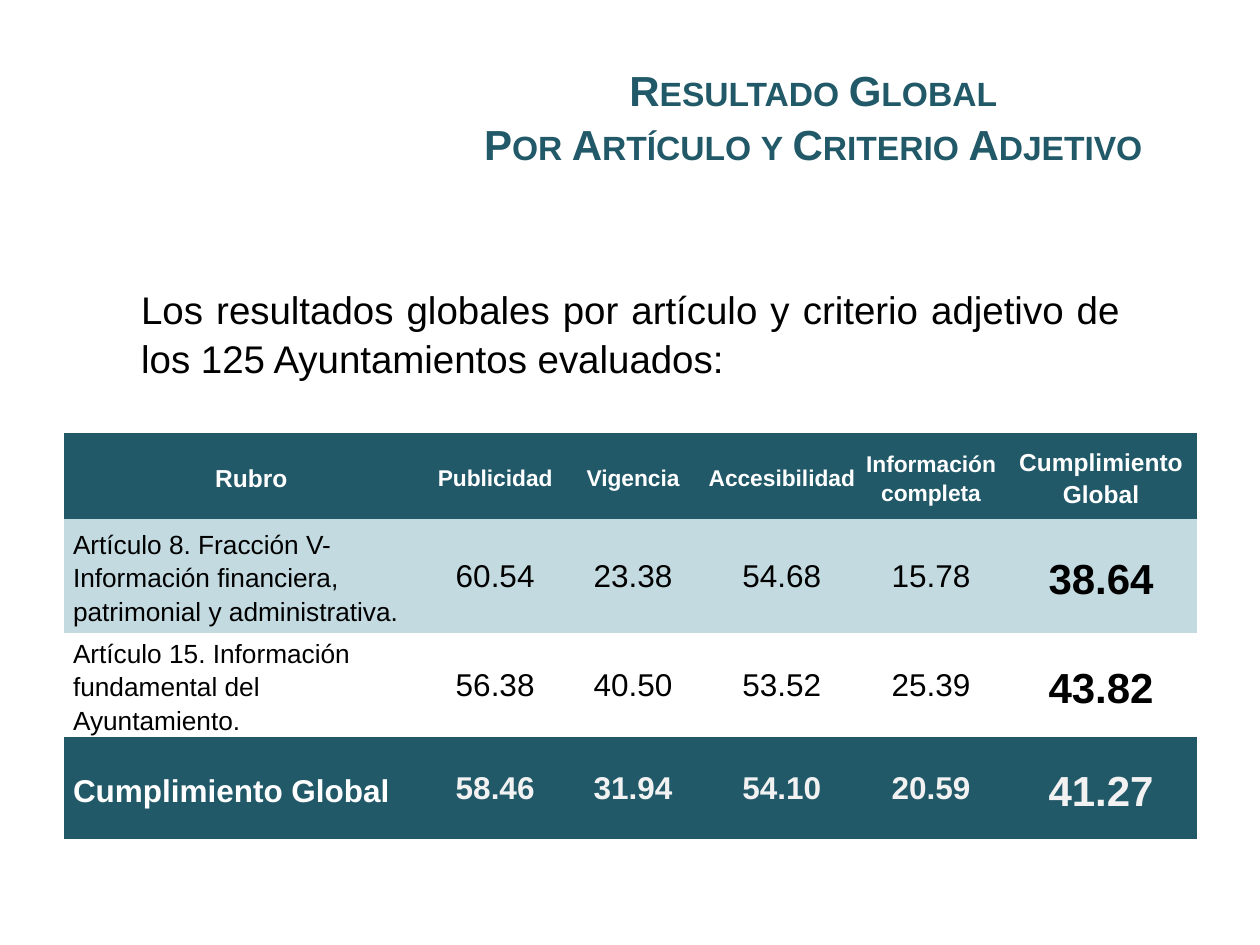
from dataclasses import dataclass

from pptx import Presentation
from pptx.dml.color import RGBColor
from pptx.enum.text import MSO_ANCHOR, MSO_AUTO_SIZE, PP_ALIGN
from pptx.oxml.ns import qn
from pptx.util import Inches, Pt


@dataclass(frozen=True)
class Theme:
    font: str = "Arial"
    teal: str = "215968"
    pale: str = "C2DAE0"
    white: str = "FFFFFF"
    light: str = "F2F2F2"
    black: str = "000000"
    title: int = 24
    body: int = 22
    figure: int = 18
    total: int = 24
    label: int = 15
    header: int = 14
    criterion: int = 13
    leading: float = 1.06
    cell_leading: float = 1.15


NO_GRID_STYLE = "{2D5ABB26-0587-4C30-8999-92F81FD0307C}"


class SlideBuilder:
    def __init__(self, deck, theme):
        self.theme = theme
        self.page = deck.slides.add_slide(deck.slide_layouts[1])

    def style(self, para, size, color, bold=False, align=PP_ALIGN.LEFT, leading=None):
        para.alignment = align
        para.line_spacing = leading
        para.font.name = self.theme.font
        para.font.size = Pt(size)
        para.font.bold = bold
        para.font.color.rgb = RGBColor.from_string(color)

    def place(self, box, left, top, width, height):
        box.left, box.top = Inches(left), Inches(top)
        box.width, box.height = Inches(width), Inches(height)
        frame = box.text_frame
        frame.word_wrap = True
        frame.auto_size = MSO_AUTO_SIZE.NONE
        frame.vertical_anchor = MSO_ANCHOR.TOP
        return frame

    def title(self, text, *area):
        frame = self.place(self.page.shapes.title, *area)
        frame.text = text
        para = frame.paragraphs[0]
        self.style(para, self.theme.title, self.theme.teal, True,
                   PP_ALIGN.CENTER, self.theme.leading)
        para._p.pPr.find(qn("a:defRPr")).set("cap", "small")

    def body(self, text, *area):
        box = self.page.placeholders[1]
        frame = self.place(box, *area)
        box.fill.solid()
        box.fill.fore_color.rgb = RGBColor.from_string(self.theme.white)
        frame.text = text
        para = frame.paragraphs[0]
        # Indented block without a bullet
        properties = para._p.get_or_add_pPr()
        properties.set("marL", str(Inches(0.38)))
        properties.set("indent", "0")
        properties.append(properties.makeelement(qn("a:buNone"), {}))
        para.space_before = Pt(0)
        self.style(para, self.theme.body, self.theme.black,
                   align=PP_ALIGN.JUSTIFY, leading=self.theme.leading)

    def table(self, rows, fills, widths, heights, left, top):
        table = self.page.shapes.add_table(
            len(heights), len(widths), Inches(left), Inches(top),
            Inches(sum(widths)), Inches(sum(heights))).table
        table.first_row = table.horz_banding = False
        table._tbl.tblPr.find(qn("a:tableStyleId")).text = NO_GRID_STYLE
        for column, width in zip(table.columns, widths):
            column.width = Inches(width)
        for row, height in zip(table.rows, heights):
            row.height = Inches(height)
        for r, (texts, fill) in enumerate(zip(rows, fills)):
            for c, text in enumerate(texts):
                cell = table.cell(r, c)
                cell.fill.solid()
                cell.fill.fore_color.rgb = RGBColor.from_string(fill)
                cell.margin_left = cell.margin_right = cell.margin_top = Inches(0.01)
                cell.margin_bottom = 0
                cell.vertical_anchor = MSO_ANCHOR.MIDDLE
                if text:
                    cell.text = text
                    self.style_cell(cell.text_frame.paragraphs[0], r, c,
                                    len(rows) - 1, len(texts) - 1)

    def style_cell(self, para, row, column, last_row, last_column):
        theme = self.theme
        is_header, is_total = row == 0, row == last_row
        is_label, is_global = column == 1, column == last_column
        if is_header:
            size = theme.header if is_label or is_global else theme.criterion
        elif is_global:
            size = theme.total
        else:
            size = theme.label if is_label and not is_total else theme.figure
        if is_header or (is_total and is_label):
            color = theme.white
        else:
            color = theme.light if is_total else theme.black
        align = PP_ALIGN.LEFT if is_label and not is_header else PP_ALIGN.CENTER
        spaced = is_header or is_label or is_global
        self.style(para, size, color, is_header or is_total or is_global, align,
                   theme.cell_leading if spaced else None)


def main():
    deck = Presentation()
    deck.slide_width, deck.slide_height = Inches(10), Inches(7.5)
    theme = Theme()
    slide = SlideBuilder(deck, theme)

    # Heading and introduction
    slide.title("Resultado Global\vPor Artículo y Criterio Adjetivo",
                2.95, 0.44, 7.01, 1.18)
    slide.body("Los resultados globales por artículo y criterio adjetivo "
               "de los 125 Ayuntamientos evaluados:", 0.64, 2.2, 8.35, 1.1)

    # Results, with a narrow empty column as left margin
    rows = [
        ["", "Rubro", "Publicidad", "Vigencia", "Accesibilidad",
         "Información completa", "Cumplimiento Global"],
        ["", "Artículo 8. Fracción V- Información financiera, patrimonial y administrativa.",
         "60.54", "23.38", "54.68", "15.78", "38.64"],
        ["", "Artículo 15. Información fundamental del Ayuntamiento.",
         "56.38", "40.50", "53.52", "25.39", "43.82"],
        ["", "Cumplimiento Global", "58.46", "31.94", "54.10", "20.59", "41.27"],
    ]
    slide.table(rows, [theme.teal, theme.pale, theme.white, theme.teal],
                widths=[0.06, 2.85, 1.02, 1.17, 1.19, 1.18, 1.52],
                heights=[0.68, 0.9, 0.83, 0.81], left=0.51, top=3.44)

    deck.save("out.pptx")


if __name__ == "__main__":
    main()
